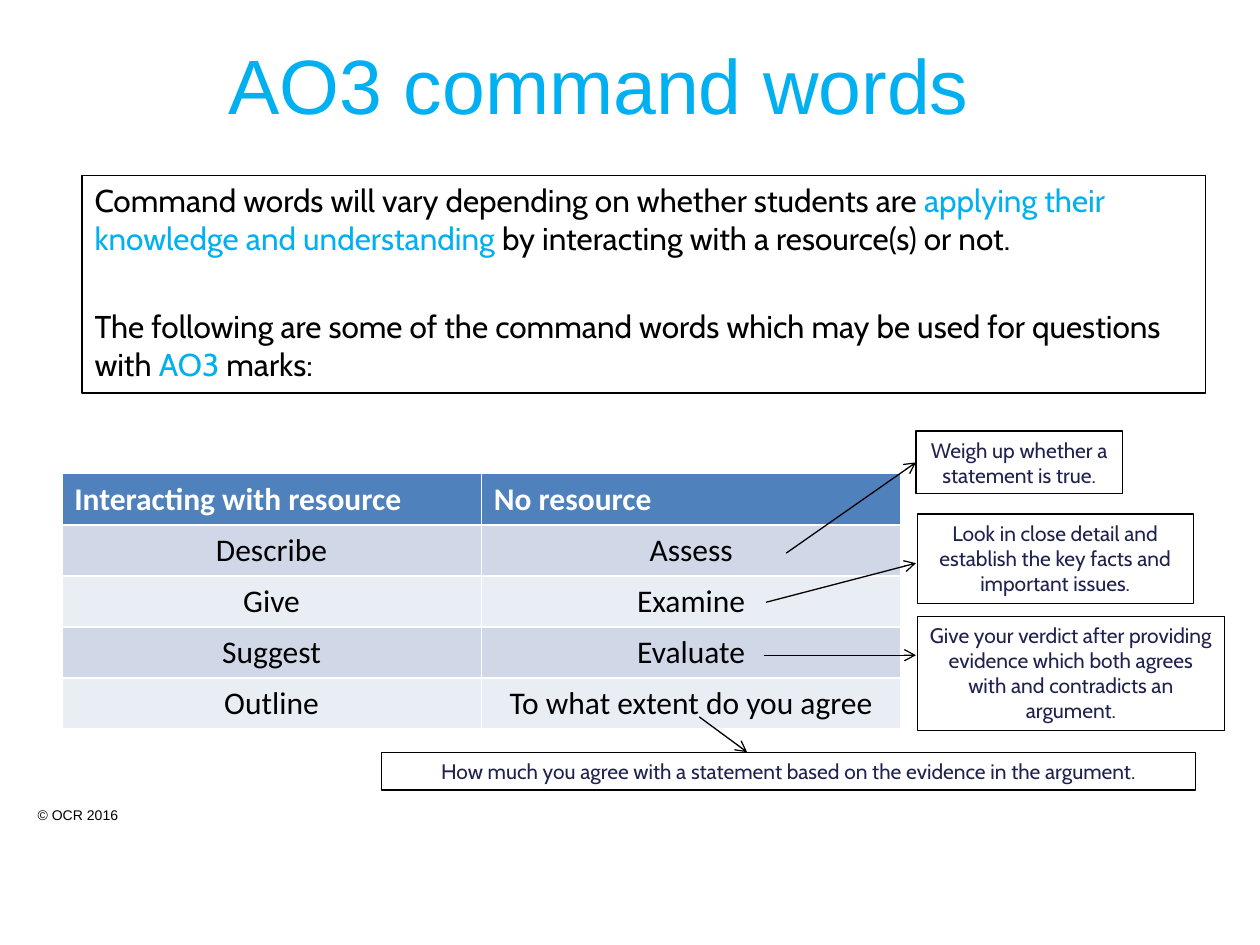
import pptx
import pptx.util
import pptx.dml.color
import pptx.enum.shapes
import pptx.enum.text
import pptx.oxml.ns
import lxml.etree

Inches = pptx.util.Inches
Pt = pptx.util.Pt
ALIGN = pptx.enum.text.PP_ALIGN
ANCHOR = pptx.enum.text.MSO_ANCHOR
BLUE = "00B0F0"
BLACK = "000000"


def color(hex_string):
    return pptx.dml.color.RGBColor.from_string(hex_string)


def style(paragraph, font_name, size, hex_string, alignment=ALIGN.LEFT):
    paragraph.alignment = alignment
    paragraph.font.name = font_name
    paragraph.font.size = Pt(size)
    paragraph.font.color.rgb = color(hex_string)


presentation = pptx.Presentation()
presentation.slide_width = Inches(10)
presentation.slide_height = Inches(7.5)
slide = presentation.slides.add_slide(presentation.slide_layouts[1])

title = slide.shapes.title
title.left, title.top, title.width, title.height = Inches(0), Inches(0.29), Inches(9.51), Inches(0.75)
title.text_frame.text = "AO3 command words"
title.text_frame.auto_size = pptx.enum.text.MSO_AUTO_SIZE.NONE
title.text_frame.vertical_anchor = ANCHOR.MIDDLE
style(title.text_frame.paragraphs[0], "Arial", 44, BLUE, ALIGN.CENTER)

body = slide.placeholders[1]
body.left, body.top, body.width, body.height = Inches(0.65), Inches(1.39), Inches(8.92), Inches(1.73)
body.line.color.rgb = color(BLACK)
body.line.width = Pt(0.75)
body.text_frame.auto_size = pptx.enum.text.MSO_AUTO_SIZE.NONE
introduction = [
    [("Command words will vary depending on whether students are ", BLACK),
     ("applying their knowledge and understanding", BLUE),
     (" by interacting with a resource(s) or not.", BLACK)],
    [("The following are some of the command words which may be used for questions with ", BLACK),
     ("AO3 ", BLUE),
     ("marks:", BLACK)],
]
for index, runs in enumerate(introduction):
    paragraph = body.text_frame.add_paragraph() if index else body.text_frame.paragraphs[0]
    properties = paragraph._p.get_or_add_pPr()
    properties.set("marL", "0")
    properties.set("indent", "0")
    lxml.etree.SubElement(properties, pptx.oxml.ns.qn("a:buNone"))
    paragraph.space_before = Pt(28.5 * index)
    paragraph.font.name = "Cabin"
    paragraph.font.size = Pt(18)
    for text, hex_string in runs:
        run = paragraph.add_run()
        run.text = text
        run.font.color.rgb = color(hex_string)

command_words = [
    ("Interacting with resource", "No resource"),
    ("Describe", "Assess"),
    ("Give", "Examine"),
    ("Suggest", "Evaluate"),
    ("Outline", "To what extent do you agree"),
]
table = slide.shapes.add_table(5, 2, Inches(0.49), Inches(3.76), Inches(6.66), Inches(2)).table
for row_index, words in enumerate(command_words):
    for column_index, word in enumerate(words):
        cell = table.cell(row_index, column_index)
        cell.text = word
        cell.fill.solid()
        paragraph = cell.text_frame.paragraphs[0]
        if row_index == 0:
            cell.fill.fore_color.rgb = color("4F81BD")
            style(paragraph, "Calibri", 18, "FFFFFF")
            paragraph.font.bold = True
        else:
            cell.fill.fore_color.rgb = color("D0D8E8" if row_index % 2 else "E9EDF4")
            style(paragraph, "Calibri", 18, BLACK, ALIGN.CENTER)

explanations = [
    (7.27, 3.42, 1.64, 0.5, "Weigh up whether a statement is true."),
    (7.28, 4.08, 2.19, 0.71, "Look in close detail and establish the key facts and important issues."),
    (7.28, 4.89, 2.44, 0.91,
     "Give your verdict after providing evidence which both agrees with and contradicts an argument."),
    (3.03, 5.97, 6.46, 0.3, "How much you agree with a statement based on the evidence in the argument."),
]
callouts = []
for left, top, width, height, text in explanations:
    callout = slide.shapes.add_shape(
        pptx.enum.shapes.MSO_SHAPE.RECTANGLE, Inches(left), Inches(top), Inches(width), Inches(height))
    callout.shadow.inherit = False
    callout.fill.solid()
    callout.fill.fore_color.rgb = color("FFFFFF")
    callout.line.color.rgb = color(BLACK)
    callout.line.width = Pt(0.75)
    callout.text_frame.word_wrap = True
    callout.text_frame.vertical_anchor = ANCHOR.TOP
    callout.text_frame.text = text
    style(callout.text_frame.paragraphs[0], "Cabin", 12, "1F224E", ALIGN.CENTER)
    callouts.append(callout)

arrows = [
    (6.24, 4.39, 7.27, 3.67),
    (6.08, 4.78, 7.27, 4.47),
    (6.06, 5.2, 7.27, 5.2),
    (5.55, 5.69, 5.93, 5.97),
]
connectors = []
for ends in arrows:
    connector = slide.shapes.add_connector(
        pptx.enum.shapes.MSO_CONNECTOR.STRAIGHT, *[Inches(value) for value in ends])
    connector.line.color.rgb = color(BLACK)
    connector.line.width = Pt(0.75)
    line = connector.line._get_or_add_ln()
    lxml.etree.SubElement(line, pptx.oxml.ns.qn("a:tailEnd"), type="arrow")
    lxml.etree.SubElement(connector._element.spPr, pptx.oxml.ns.qn("a:effectLst"))
    connectors.append(connector)
connectors[0].end_connect(callouts[0], 1)

copyright_box = slide.shapes.add_textbox(Inches(0.2), Inches(6.35), Inches(1.89), Inches(0.24))
copyright_box.text_frame.word_wrap = True
copyright_box.text_frame.text = "© OCR 2016"
style(copyright_box.text_frame.paragraphs[0], "Arial", 8, BLACK)

presentation.save("out.pptx")
